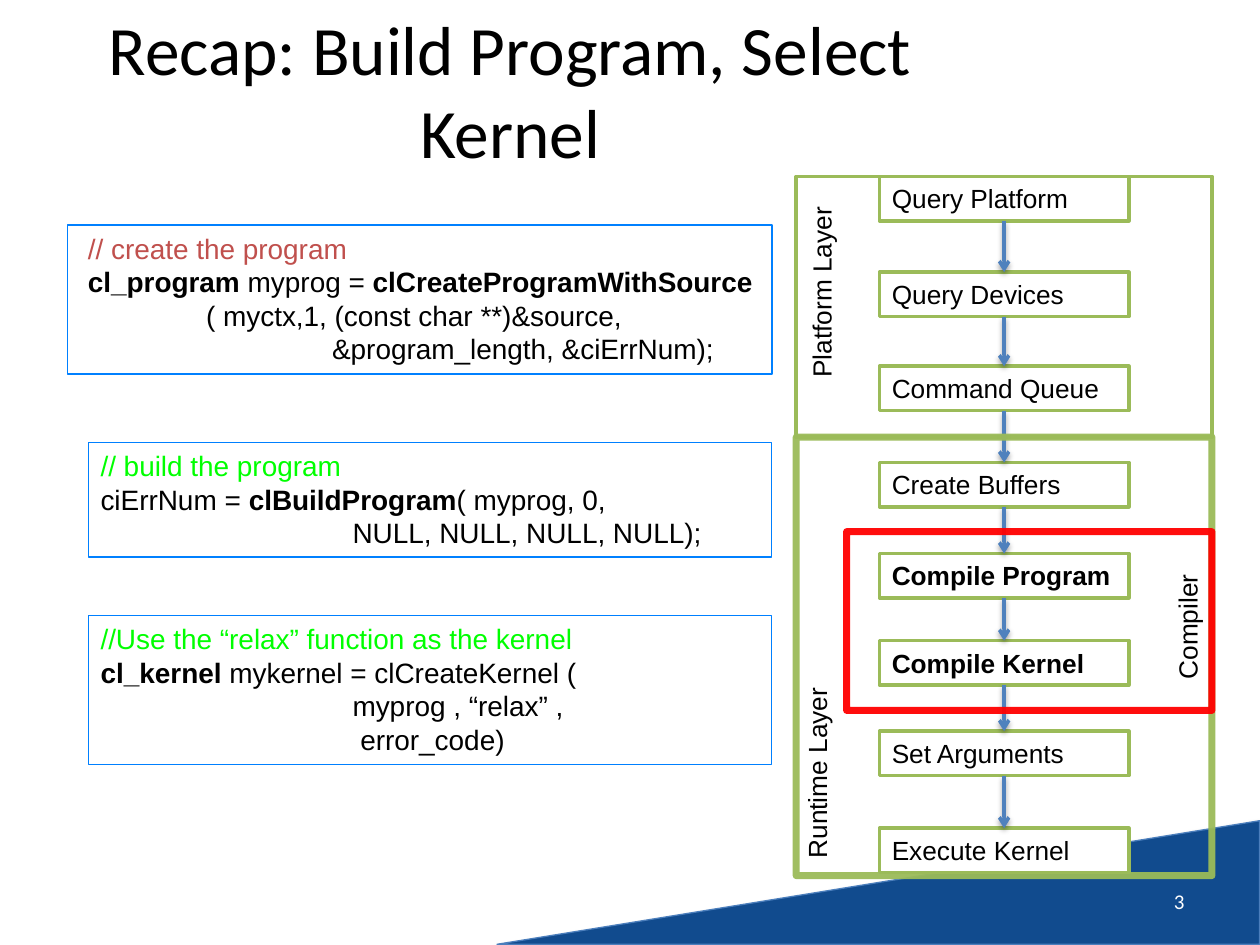
from pptx import Presentation
from pptx.dml.color import RGBColor
from pptx.enum import shapes, text
from pptx.oxml import ns, xmlchemy as xc
from pptx.util import Pt

HUES = {
    "navy": "114B8E", "rim": "4B7EBC", "black": "000000", "white": "FFFFFF",
    "brick": "C0504D", "lime": "00FF00", "sky": "0080FF", "green": "9BBB59",
    "blue": "4F81BD", "red": "FF0000",
}
FORMS = shapes.MSO_SHAPE
ANCHOR = text.MSO_ANCHOR
ALIGN = text.PP_ALIGN

CODES = [
    ((38.7, 128.6, 402.5, 85.2), "brick", [
        (0, " // create the program"),
        (0, " |cl_program |myprog = |clCreateProgramWithSource"),
        (72, "( myctx,1, (const char **)&source,"),
        (144, "&program_length, &ciErrNum);"),
    ]),
    ((50.4, 252.8, 390.5, 65.5), "lime", [
        (0, "// build the program"),
        (0, "ciErrNum = |clBuildProgram|( myprog, 0,"),
        (144, "NULL, NULL, NULL, NULL);"),
    ]),
    ((50.4, 351.6, 390.5, 85.2), "lime", [
        (0, "//Use the “relax” function as the kernel"),
        (0, "|cl_kernel |mykernel = clCreateKernel ("),
        (144, "myprog , “relax” ,"),
        (144, " error_code)"),
    ]),
]
STEPS = [
    ("Query Platform", 0, False), ("Query Devices", 54.7, False),
    ("Command Queue", 108.5, False), ("Create Buffers", 163.5, False),
    ("Compile Program", 215.5, True), ("Compile Kernel", 265.3, True),
    ("Set Arguments", 317, False), ("Execute Kernel", 372.5, False),
]


def rgb(name):
    return RGBColor.from_string(HUES[name])


def style(font, size, hue, face="Arial", bold=False):
    font.size = Pt(size)
    font.name = face
    font.bold = bold
    font.color.rgb = rgb(hue)


def stroke(item, hue, width):
    item.line.color.rgb = rgb(hue)
    item.line.width = Pt(width)


def shape(slide, box, hue, width, fill=None, form=FORMS.RECTANGLE):
    item = slide.shapes.add_shape(form, *map(Pt, box))
    stroke(item, hue, width)
    if fill:
        item.fill.solid()
        item.fill.fore_color.rgb = rgb(fill)
    else:
        item.fill.background()
    return item


def rect(slide, box, hue, width, fill=None):
    item = shape(slide, box, hue, width, fill)
    item.shadow.inherit = False
    item.text_frame.vertical_anchor = ANCHOR.TOP
    return item


def label(slide, box, words, size, hue="black", face="Arial",
          align=ALIGN.LEFT, anchor=ANCHOR.TOP):
    item = slide.shapes.add_textbox(*map(Pt, box))
    frame = item.text_frame
    frame.word_wrap = True
    frame.vertical_anchor = anchor
    frame.text = words
    frame.paragraphs[0].alignment = align
    style(frame.paragraphs[0].runs[0].font, size, hue, face)
    return item


def wedge(slide, box):
    x, y, w, h = box
    left, top = x + (w - h) / 2, y + (h - w) / 2
    item = shape(slide, (left, top, h, w), "rim", 0.75, "navy",
                 FORMS.RIGHT_TRIANGLE)
    item.rotation = 270


def code(slide, box, note, lines):
    frame = rect(slide, box, "sky", 0.75).text_frame
    frame.word_wrap = True
    for i, (indent, line) in enumerate(lines):
        para = frame.paragraphs[0] if i == 0 else frame.add_paragraph()
        para.alignment = ALIGN.LEFT
        props = para._p.get_or_add_pPr()
        props.set("marL", str(Pt(indent)))
        props.set("indent", "0")
        for j, part in enumerate(line.split("|")):
            if part:
                run = para.add_run()
                run.text = part
                style(run.font, 16, "black" if i else note, bold=j % 2 == 1)


def step(slide, box, words, bold):
    frame = rect(slide, box, "green", 2, "white").text_frame
    frame.word_wrap = True
    frame.text = words
    frame.paragraphs[0].alignment = ALIGN.LEFT
    style(frame.paragraphs[0].runs[0].font, 15, "black", bold=bold)


def arrow(slide, x, start, end):
    item = slide.shapes.add_connector(
        shapes.MSO_CONNECTOR.STRAIGHT, Pt(x), Pt(start), Pt(x), Pt(end))
    stroke(item, "blue", 2)
    tip = xc.OxmlElement("a:tailEnd")
    tip.set("type", "arrow")
    item.line._get_or_add_ln().append(tip)


def frame(slide, box, hue):
    item = rect(slide, box, hue, 4)
    tint = item.line._get_or_add_ln().find(".//" + ns.qn("a:srgbClr"))
    alpha = xc.OxmlElement("a:alpha")
    alpha.set("val", "95000")
    tint.append(alpha)


def flow(slide, box):
    x, y, w, h = box
    left, wide, high = x + 47.5, 142.6, 25.4
    split = 149
    rect(slide, (x, y, w, split), "green", 2)
    for words, top, bold in STEPS:
        step(slide, (left, y + top, wide, high), words, bold)
    for (_, top, _), (_, below, _) in zip(STEPS, STEPS[1:]):
        arrow(slide, left + wide / 2, y + top + high, y + below)
    for words, dx, dy, long in [
        ("Platform Layer", -45.4, 49.7, 119.5),
        ("Runtime Layer", -46.8, 325.4, 117.4),
        ("Compiler", 184.3, 242.6, 78.5),
    ]:
        label(slide, (x + dx, y + dy, long, high), words, 15).rotation = 270
    frame(slide, (x, y + split, w, h - split), "green")
    frame(slide, (x + 28.8, y + 203, w - 28.8, 102.2), "red")


def main():
    deck = Presentation()
    deck.slide_width, deck.slide_height = Pt(720), Pt(540)
    slide = deck.slides.add_slide(deck.slide_layouts[6])
    wedge(slide, (284, 469, 435.7, 70.6))
    label(slide, (36, 5.8, 511.2, 90), "Recap: Build Program, Select Kernel",
          39.6, face="Calibri", align=ALIGN.CENTER, anchor=ANCHOR.MIDDLE)
    label(slide, (516.2, 500.4, 167.8, 28.8), "3", 12, "white", "Calibri",
          ALIGN.RIGHT, ANCHOR.MIDDLE)
    for box, note, lines in CODES:
        code(slide, box, note, lines)
    flow(slide, (455, 100.8, 237.6, 399.6))
    deck.save("out.pptx")


if __name__ == "__main__":
    main()
